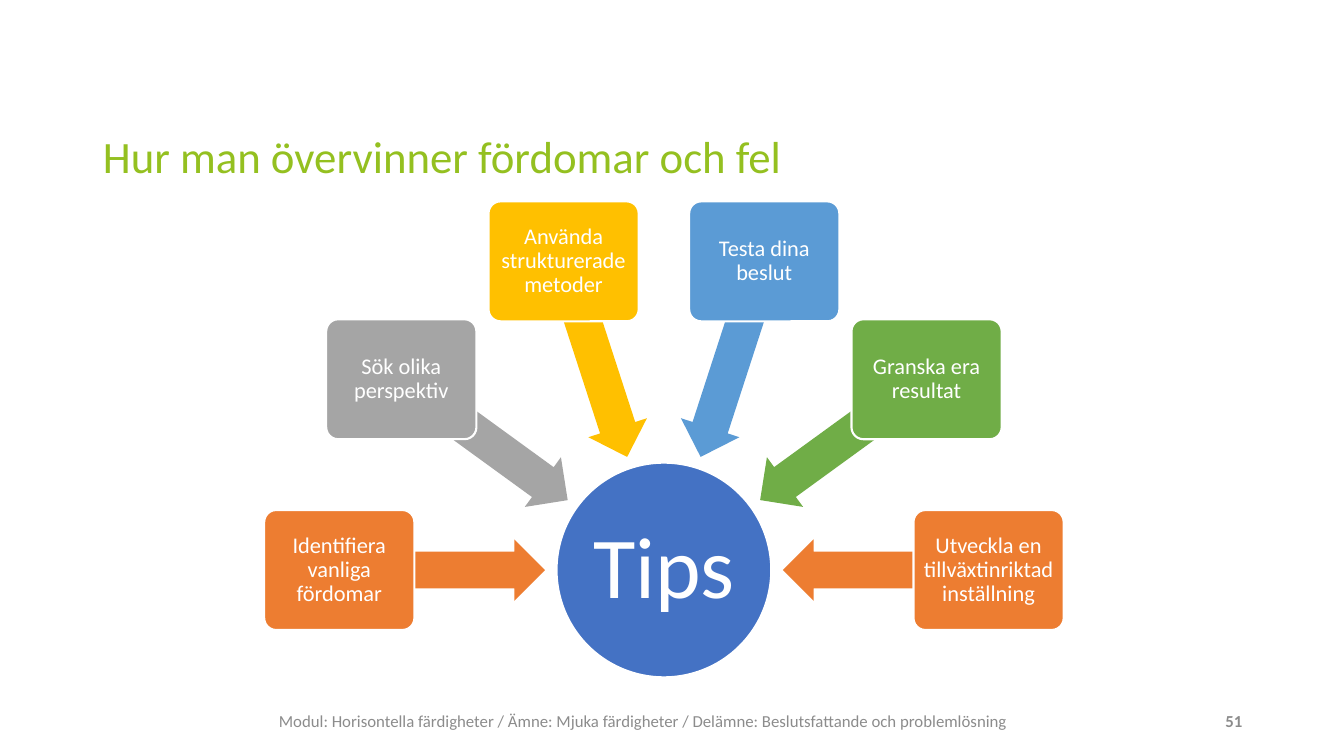
from dataclasses import dataclass
from math import cos, radians, sin

from pptx import Presentation
from pptx.dml.color import RGBColor
from pptx.enum.shapes import MSO_SHAPE
from pptx.enum.text import MSO_ANCHOR, PP_ALIGN
from pptx.util import Inches, Pt

OVAL, CARD, ARROW = MSO_SHAPE.OVAL, MSO_SHAPE.ROUNDED_RECTANGLE, MSO_SHAPE.LEFT_ARROW
MIDDLE, BOTTOM = MSO_ANCHOR.MIDDLE, MSO_ANCHOR.BOTTOM
LEFT, CENTER, RIGHT = PP_ALIGN.LEFT, PP_ALIGN.CENTER, PP_ALIGN.RIGHT

TITLE = "Hur man övervinner fördomar och fel"
HUB = "Tips"
TIPS = [
    ("Identifiera vanliga fördomar", "ED7D31"),
    ("Sök olika perspektiv", "A5A5A5"),
    ("Använda strukturerade metoder", "FFC000"),
    ("Testa dina beslut", "5B9BD5"),
    ("Granska era resultat", "70AD47"),
    ("Utveckla en tillväxtinriktad inställning", "ED7D31"),
]
FOOTER = ("Modul: Horisontella färdigheter / Ämne: Mjuka färdigheter / "
          "Delämne: Beslutsfattande och problemlösning")
NUMBER = "51"


@dataclass(frozen=True)
class Theme:
    font: str = "Calibri"
    title: str = "94C020"
    hub: str = "4472C4"
    white: str = "FFFFFF"
    gray: str = "8C8C8C"
    title_size: int = 32
    hub_size: int = 62
    tip_size: int = 16
    foot_size: int = 12


theme = Theme()
MID_X, MID_Y = 6.585, 5.655
HUB_SIZE = 2.13
CARD_W, CARD_H, CARD_REACH = 1.49, 1.19, 3.22
ARROW_W, ARROW_H, ARROW_REACH = 2.04, 0.61, 2.2


def write(shape, text, size, color, align=CENTER, anchor=MIDDLE, bold=False,
          inset=None, spacing=None):
    frame = shape.text_frame
    frame.text = text
    frame.word_wrap = True
    frame.vertical_anchor = anchor
    if inset is not None:
        frame.margin_left = frame.margin_right = Inches(inset)
        frame.margin_top = frame.margin_bottom = Inches(inset)
    para = frame.paragraphs[0]
    para.alignment = align
    para.line_spacing = spacing
    font = para.font
    font.name, font.size, font.bold = theme.font, Pt(size), bold
    font.color.rgb = RGBColor.from_string(color)


def draw(slide, kind, x, y, width, height, fill, edge=True):
    """Add a filled shape centred on x, y."""
    shape = slide.shapes.add_shape(
        kind, Inches(x - width / 2), Inches(y - height / 2),
        Inches(width), Inches(height))
    shape.shadow.inherit = False
    shape.fill.solid()
    shape.fill.fore_color.rgb = RGBColor.from_string(fill)
    if edge:
        shape.line.color.rgb = RGBColor.from_string(theme.white)
        shape.line.width = Pt(1.5)
    else:
        shape.line.fill.background()
    return shape


def add_tip(slide, text, color, angle):
    """Add an arrow and its card on the ray at angle from the hub."""
    dx, dy = cos(radians(angle)), sin(radians(angle))
    arrow = draw(slide, ARROW, MID_X + ARROW_REACH * dx, MID_Y + ARROW_REACH * dy,
                 ARROW_W, ARROW_H, color, edge=False)
    arrow.adjustments[0], arrow.adjustments[1] = 0.6, 0.5
    arrow.rotation = angle
    card = draw(slide, CARD, MID_X + CARD_REACH * dx, MID_Y + CARD_REACH * dy,
                CARD_W, CARD_H, color)
    card.adjustments[0] = 0.1
    write(card, text, theme.tip_size, theme.white, inset=0.03, spacing=0.9)


def add_note(slide, text, box, align, bold=False):
    note = slide.shapes.add_textbox(*map(Inches, box))
    write(note, text, theme.foot_size, theme.gray, align, bold=bold)


def main():
    deck = Presentation()
    deck.slide_width, deck.slide_height = Inches(13.33), Inches(7.5)
    slide = deck.slides.add_slide(deck.slide_layouts[5])

    title = slide.shapes.title
    title.left, title.top = Inches(0.92), Inches(0.97)
    title.width, title.height = Inches(9.91), Inches(0.9)
    write(title, TITLE, theme.title_size, theme.title, LEFT, BOTTOM, spacing=0.9)

    add_note(slide, FOOTER, (0.92, 6.82, 10.92, 0.66), CENTER)
    add_note(slide, NUMBER, (11.92, 6.95, 0.5, 0.4), RIGHT, bold=True)

    hub = draw(slide, OVAL, MID_X, MID_Y, HUB_SIZE, HUB_SIZE, theme.hub)
    write(hub, HUB, theme.hub_size, theme.white, inset=0.04, spacing=0.9)
    step = 180 / (len(TIPS) - 1)
    for i, (text, color) in enumerate(TIPS):
        add_tip(slide, text, color, 180 + i * step)

    deck.save("out.pptx")


if __name__ == "__main__":
    main()
